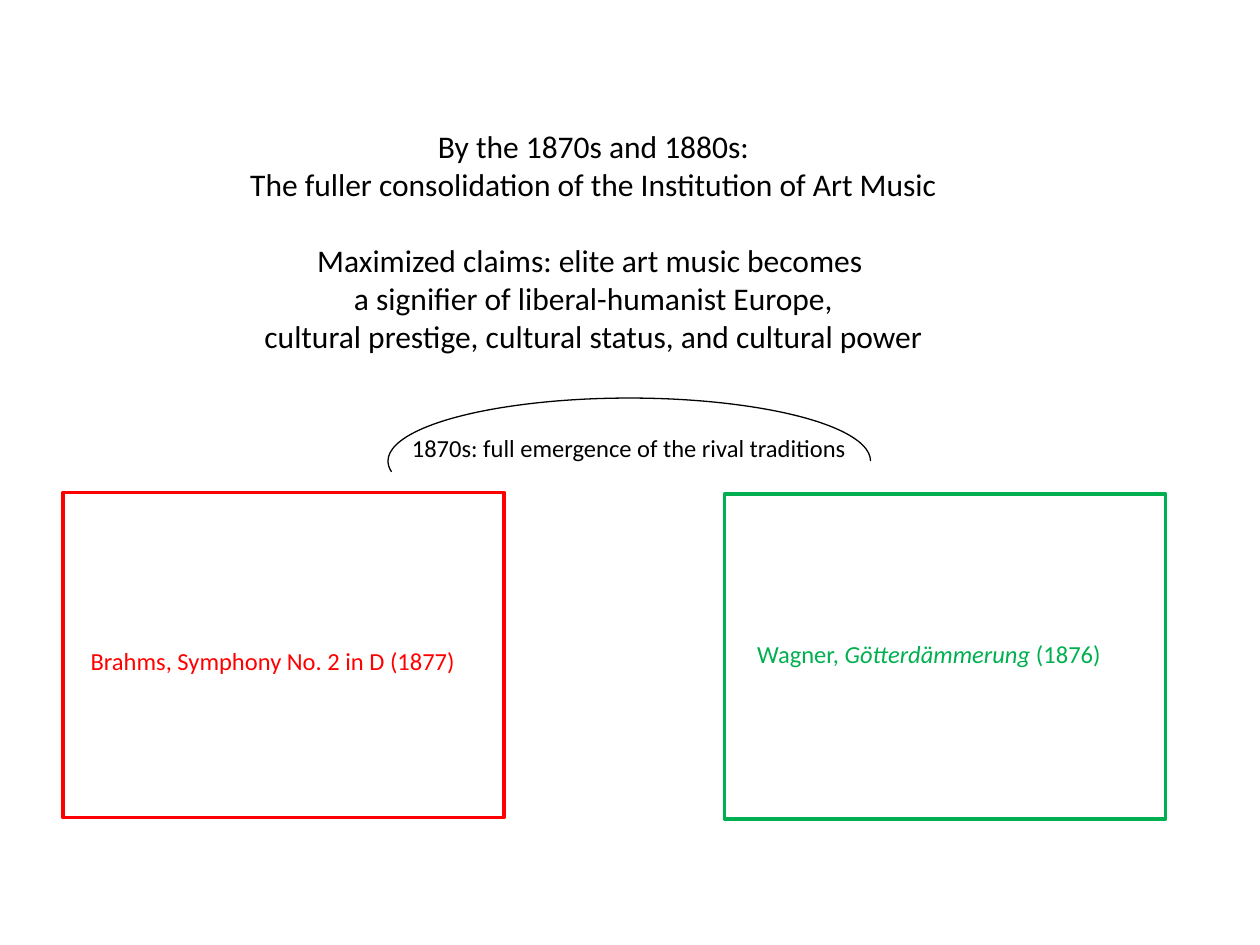
import pptx
import pptx.util
import pptx.dml.color
import pptx.enum.shapes
import pptx.enum.text
from dataclasses import dataclass

Inches = pptx.util.Inches
Pt = pptx.util.Pt
SHAPE = pptx.enum.shapes.MSO_SHAPE
ALIGN = pptx.enum.text.PP_ALIGN


@dataclass(frozen=True)
class Theme:
    font: str = "Calibri"
    ink: str = "000000"
    red: str = "FF0000"
    green: str = "00B050"
    heading: float = 18
    body: float = 14
    frame: float = 2
    hairline: float = 0.75


THEME = Theme()


def rgb(value):
    return pptx.dml.color.RGBColor.from_string(value)


def add_text(s, box, paragraphs, size=THEME.body, color=THEME.ink,
             align=ALIGN.LEFT, gaps=None):
    """Each paragraph is a list of (text, italic); gaps maps index to space before."""
    sp = s.shapes.add_textbox(*map(Inches, box))
    tf = sp.text_frame
    tf.word_wrap = True
    for i, runs in enumerate(paragraphs):
        p = tf.paragraphs[0] if i == 0 else tf.add_paragraph()
        p.alignment = align
        if gaps and i in gaps:
            p.space_before = Pt(gaps[i])
        for text, italic in runs:
            r = p.add_run()
            r.text = text
            r.font.name = THEME.font
            r.font.size = Pt(size)
            r.font.italic = italic
            r.font.color.rgb = rgb(color)
    return sp


def add_outline(s, kind, box, color, width):
    sp = s.shapes.add_shape(kind, *map(Inches, box))
    sp.shadow.inherit = False
    sp.fill.background()
    sp.line.color.rgb = rgb(color)
    sp.line.width = Pt(width)
    return sp


def add_heading(s, box):
    lines = [
        "By the 1870s and 1880s:",
        "The fuller consolidation of the Institution of Art Music",
        "Maximized claims: elite art music becomes ",
        "a signifier of liberal-humanist Europe,",
        "cultural prestige, cultural status, and cultural power",
    ]
    # One line of space parts the two statements
    add_text(s, box, [[(line, False)] for line in lines], size=THEME.heading,
             align=ALIGN.CENTER, gaps={2: 22})


def add_composer(s, box, label_offset, runs, color):
    left, top, width, height = box
    dx, dy = label_offset
    add_outline(s, SHAPE.RECTANGLE, box, color, THEME.frame)
    add_text(s, (left + dx, top + dy, 3.31, 0.34), [runs], color=color)


def add_rivalry(s, box):
    left, top, width, height = box
    arc = add_outline(s, SHAPE.ARC, box, THEME.ink, THEME.hairline)
    arc.adjustments[0] = 106.44
    arc.adjustments[1] = 0
    add_text(s, (left + 0.09, top + 0.23, 3.92, 0.34),
             [[("1870s: full emergence of the rival traditions", False)]])


def main():
    prs = pptx.Presentation()
    prs.slide_width, prs.slide_height = Inches(10), Inches(7.5)
    s = prs.slides.add_slide(prs.slide_layouts[6])

    # Heading
    add_heading(s, (1.25, 0.96, 6.92, 1.92))

    # The two rival composers
    add_composer(s, (0.5, 3.91, 3.5, 2.58), (0.12, 1.17),
                 [("Brahms, Symphony No. 2 in D (1877)", False)], THEME.red)
    add_composer(s, (5.75, 3.92, 3.5, 2.58), (0.16, 1.1),
                 [("Wagner, ", False), ("Götterdämmerung", True),
                  (" (1876)", False)], THEME.green)

    # Arc joining them
    add_rivalry(s, (3.08, 3.16, 3.83, 1))

    prs.save("out.pptx")


if __name__ == "__main__":
    main()
